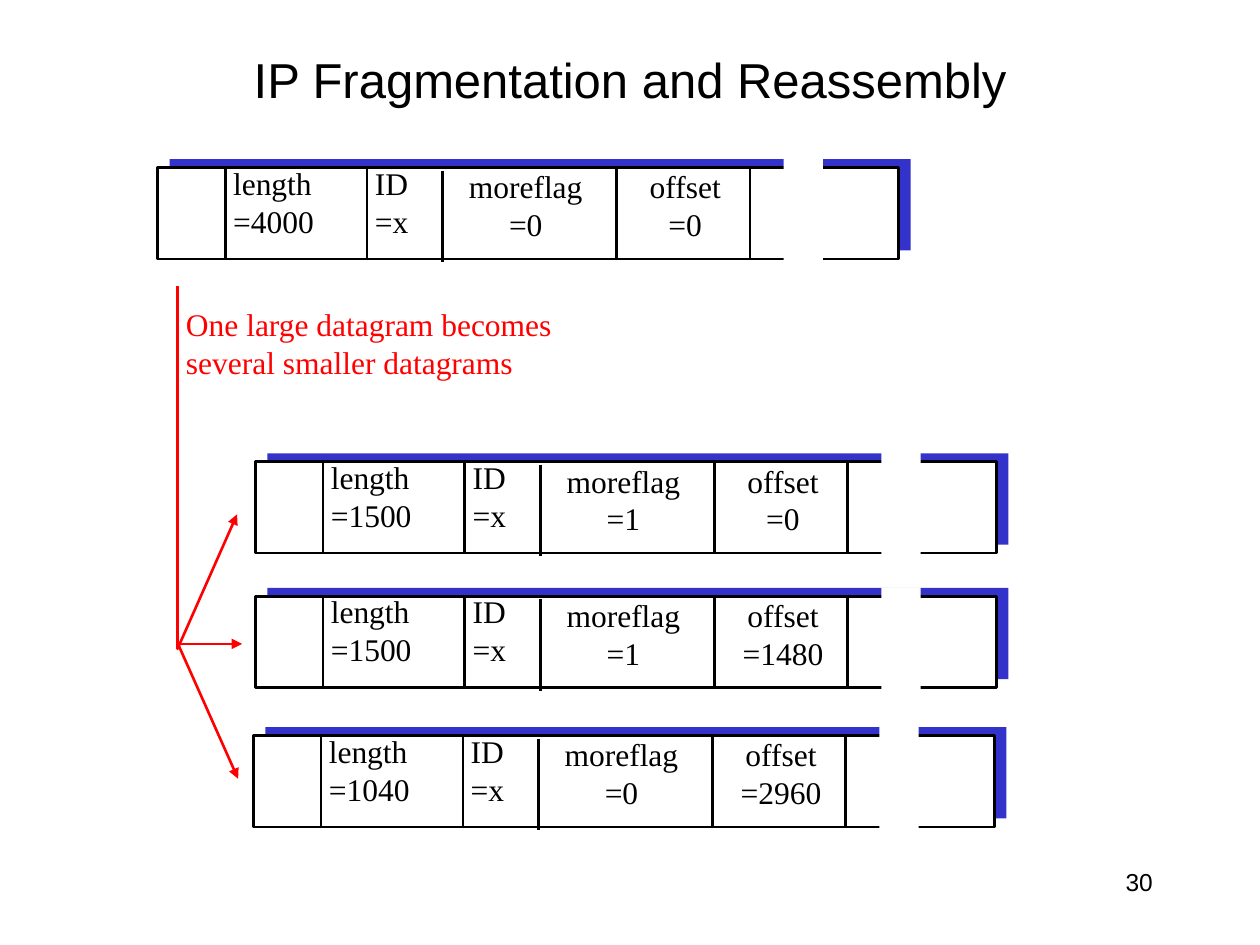
from lxml import etree
from pptx import Presentation
from pptx.dml.color import RGBColor
from pptx.enum.shapes import MSO_CONNECTOR, MSO_SHAPE
from pptx.enum.text import MSO_ANCHOR, PP_ALIGN
from pptx.oxml.ns import qn
from pptx.util import Cm, Pt

BLACK = RGBColor(0x00, 0x00, 0x00)
WHITE = RGBColor(0xFF, 0xFF, 0xFF)
BLUE = RGBColor(0x33, 0x33, 0xCC)
RED = RGBColor(0xFF, 0x00, 0x00)

SERIF = {"name": "Times New Roman", "size": Pt(18)}
TITLE = {"name": "Arial", "size": Pt(28)}
NUMBER = {"name": "Arial", "size": Pt(14)}


def add_text(shapes, lines, box, font, color=BLACK, align=PP_ALIGN.LEFT, wrap=False):
    frame = shapes.add_textbox(*map(Cm, box)).text_frame
    frame.word_wrap = wrap
    for i, line in enumerate(lines):
        paragraph = frame.add_paragraph() if i else frame.paragraphs[0]
        paragraph.alignment = align
        run = paragraph.add_run()
        run.text = line
        for attribute, value in font.items():
            setattr(run.font, attribute, value)
        run.font.color.rgb = color
    return frame


def style_stroke(item, color, arrow=False):
    item.line.color.rgb = color
    item.line.width = Pt(1.5)
    properties = item.element.spPr
    if arrow:
        etree.SubElement(properties.get_or_add_ln(), qn("a:tailEnd"), type="triangle")
    etree.SubElement(properties, qn("a:effectLst"))


prs = Presentation()
prs.slide_width, prs.slide_height = Cm(25.4), Cm(19.05)
slide = prs.slides.add_slide(prs.slide_layouts[6])

# Slide number and title
add_text(slide.shapes, ["30"], (18.21, 17.35, 5.28, 1.27), NUMBER,
         align=PP_ALIGN.RIGHT, wrap=True)
title = add_text(slide.shapes, ["IP Fragmentation and Reassembly"],
                 (1.9, 0.64, 21.6, 1.9), TITLE, align=PP_ALIGN.CENTER, wrap=True)
title.vertical_anchor = MSO_ANCHOR.MIDDLE

# Datagrams: left, top, length, moreflag, offset
datagrams = [
    (3.18, 3.38, 4000, 0, 0),
    (5.15, 9.31, 1500, 1, 0),
    (5.15, 12.02, 1500, 1, 1480),
    (5.11, 14.83, 1040, 0, 2960),
]
HEADER_WIDTH, HEADER_HEIGHT = 14.94, 1.84
# Divider offset from the header's left edge and top edge
dividers = [(1.36, 0), (4.22, 0), (5.74, 0.06), (9.25, 0), (11.94, 0)]

for left, top, length, moreflag, offset in datagrams:
    shapes = slide.shapes.add_group_shape().shapes

    # Blue backing and white header
    for dx, dy, fill in [(0.24, -0.17, BLUE), (0, 0, WHITE)]:
        bar = shapes.add_shape(MSO_SHAPE.RECTANGLE, Cm(left + dx), Cm(top + dy),
                               Cm(HEADER_WIDTH), Cm(HEADER_HEIGHT))
        bar.fill.solid()
        bar.fill.fore_color.rgb = fill
        bar.line.fill.background()
        bar.shadow.inherit = False
    bar.line.color.rgb = BLACK
    bar.line.width = Pt(1.5)

    # Header fields, each box a little wider than its longest line
    fields = [
        ("ID", "x", 4.13, -0.2, 1.25, PP_ALIGN.LEFT),
        ("offset", offset, 9.52, -0.13, 2.23, PP_ALIGN.CENTER),
        ("moreflag", moreflag, 5.92, -0.13, 3, PP_ALIGN.CENTER),
        ("length", length, 1.27, -0.2, 2.23, PP_ALIGN.LEFT),
    ]
    for field, value, dx, dy, width, align in fields:
        add_text(shapes, [field, f"={value}"], (left + dx, top + dy, width, 1.78),
                 SERIF, align=align, wrap=True)

    for dx, dy in dividers:
        divider = shapes.add_connector(
            MSO_CONNECTOR.STRAIGHT, Cm(left + dx), Cm(top + dy),
            Cm(left + dx), Cm(top + dy + HEADER_HEIGHT))
        style_stroke(divider, BLACK)

    # Break in the payload
    payload_break = shapes.add_shape(MSO_SHAPE.RECTANGLE, Cm(left + 12.62),
                                     Cm(top - 0.18), Cm(0.79), Cm(2.08))
    payload_break.fill.solid()
    payload_break.fill.fore_color.rgb = WHITE
    payload_break.line.fill.background()
    payload_break.shadow.inherit = False

# Arrows from the large datagram to its fragments
shapes = slide.shapes.add_group_shape().shapes
builder = shapes.build_freeform(Cm(3.58), Cm(5.77))
builder.add_line_segments([(Cm(3.58), Cm(13.08)), (Cm(4.78), Cm(10.37))], close=False)
first_arrow = builder.convert_to_shape()
first_arrow.fill.background()
style_stroke(first_arrow, RED, arrow=True)

for ends in [(3.58, 12.98, 4.88, 12.98), (3.61, 13.03, 4.8, 15.7)]:
    fragment_arrow = shapes.add_connector(MSO_CONNECTOR.STRAIGHT, *map(Cm, ends))
    style_stroke(fragment_arrow, RED, arrow=True)

add_text(shapes, ["One large datagram becomes", "several smaller datagrams"],
         (3.5, 6.02, 8.1, 1.78), SERIF, RED)

prs.save("out.pptx")
